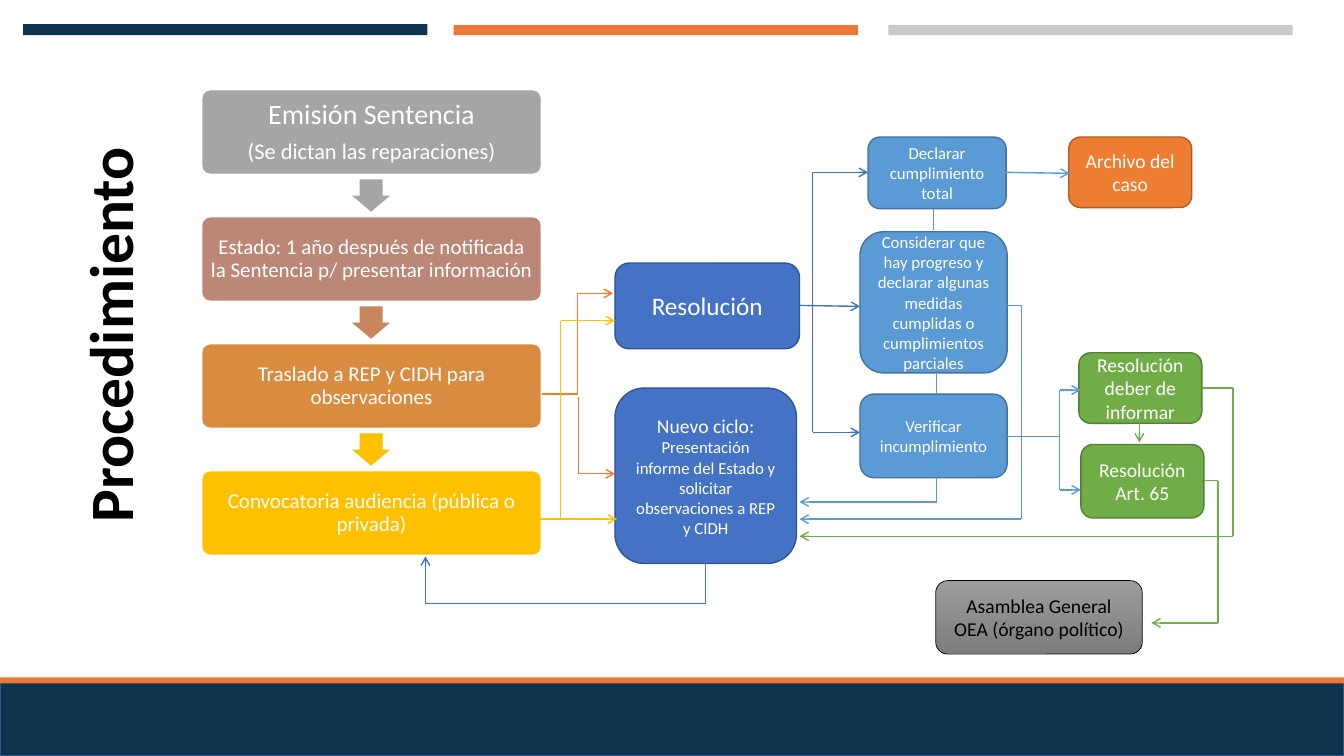
"""Build the slide on the procedure that follows a judgment."""
import dataclasses

import lxml.etree
import pptx
import pptx.dml.color
import pptx.enum.shapes
import pptx.enum.text
import pptx.oxml.ns
import pptx.util

Inches = pptx.util.Inches
Pt = pptx.util.Pt
ShapeType = pptx.enum.shapes.MSO_SHAPE
Align = pptx.enum.text.PP_ALIGN
Anchor = pptx.enum.text.MSO_ANCHOR


@dataclasses.dataclass(frozen=True)
class Theme:
    font: str = "Calibri"
    white: str = "FFFFFF"
    black: str = "000000"
    navy: str = "0D334D"
    accent: str = "ED7736"
    silver: str = "C9C9C9"
    gray: str = "A5A5A5"
    rose: str = "BB8776"
    copper: str = "C9855C"
    ochre: str = "D98B3F"
    gold: str = "FFC000"
    blue: str = "4472C4"
    blue_edge: str = "325491"
    sky: str = "5B9BD5"
    sky_edge: str = "43739E"
    orange: str = "ED7D31"
    orange_edge: str = "AF5C24"
    green: str = "70AD47"
    green_edge: str = "538035"
    gradient: tuple = ("9D9D9D", "7C7C7C")
    title: int = 44
    heading: int = 20
    resolution: int = 18
    subheading: int = 16
    step: int = 15
    body: int = 14
    small: int = 12


THEME = Theme()


def rgb(color):
    return pptx.dml.color.RGBColor.from_string(color)


def add_run(paragraph, text, size, color, bold=False):
    run = paragraph.add_run()
    run.text = text
    run.font.name = THEME.font
    run.font.size = Pt(size)
    run.font.bold = bold
    run.font.color.rgb = rgb(color)


def add_block(slide, kind, box, fill, edge=None, edge_width=1):
    shape = slide.shapes.add_shape(kind, *map(Inches, box))
    shape.shadow.inherit = False
    if isinstance(fill, tuple):
        shape.fill.gradient()
        shape.fill.gradient_angle = 270
        for stop, color in zip(shape.fill.gradient_stops, fill):
            stop.color.rgb = rgb(color)
    else:
        shape.fill.solid()
        shape.fill.fore_color.rgb = rgb(fill)
    if edge:
        shape.line.color.rgb = rgb(edge)
        shape.line.width = Pt(edge_width)
    else:
        shape.line.fill.background()
    return shape


def write_lines(shape, lines, color):
    frame = shape.text_frame
    frame.word_wrap = True
    frame.vertical_anchor = Anchor.MIDDLE
    for index, (text, size) in enumerate(lines):
        paragraph = frame.add_paragraph() if index else frame.paragraphs[0]
        paragraph.alignment = Align.CENTER
        add_run(paragraph, text, size, color)


def add_node(slide, box, fill, edge, *lines, color=THEME.white, edge_width=1):
    shape = add_block(slide, ShapeType.ROUNDED_RECTANGLE, box, fill, edge, edge_width)
    write_lines(shape, lines, color)


def add_step(slide, top, fill, inset, lines):
    shape = add_block(slide, ShapeType.ROUNDED_RECTANGLE, (2, top, 3.37, 0.84), fill, THEME.white)
    shape.adjustments[0] = 0.1
    write_lines(shape, lines, THEME.white)
    frame = shape.text_frame
    frame.margin_left = frame.margin_right = Inches(inset)
    frame.margin_top = frame.margin_bottom = Inches(inset)
    for paragraph, (_, size) in zip(frame.paragraphs, lines):
        paragraph.line_spacing = 0.9
        paragraph.space_after = Pt(size * 0.35)


def add_step_arrow(slide, top, fill):
    arrow = add_block(slide, ShapeType.RIGHT_ARROW, (3.52, top, 0.32, 0.38), fill)
    arrow.rotation = 90
    arrow.adjustments[0] = 0.6


def add_route(slide, color, points, arrow=True):
    for index, (start, end) in enumerate(zip(points, points[1:]), 2):
        connector = slide.shapes.add_connector(
            pptx.enum.shapes.MSO_CONNECTOR.STRAIGHT, *map(Inches, start + end))
        connector.line.color.rgb = rgb(color)
        connector.line.width = Pt(1)
        if arrow and index == len(points):
            head = lxml.etree.SubElement(connector.line._get_or_add_ln(), pptx.oxml.ns.qn("a:tailEnd"))
            head.set("type", "arrow")
        lxml.etree.SubElement(connector._element.spPr, pptx.oxml.ns.qn("a:effectLst"))


def add_title(slide, text):
    title = slide.shapes.title
    title.left, title.top, title.width, title.height = map(Inches, (-1, 2.68, 4.26, 0.94))
    title.rotation = 270
    frame = title.text_frame
    frame.word_wrap = True
    frame.auto_size = pptx.enum.text.MSO_AUTO_SIZE.NONE
    frame.vertical_anchor = Anchor.TOP
    frame.paragraphs[0].alignment = Align.LEFT
    add_run(frame.paragraphs[0], text, THEME.title, THEME.black, bold=True)


def add_bands(slide):
    for box, fill, edge in (
        ((0.23, 0.24, 4.01, 0.11), THEME.navy, None),
        ((4.5, 0.25, 4.01, 0.1), THEME.accent, None),
        ((8.81, 0.25, 4.01, 0.1), THEME.silver, None),
        ((0, 6.77, 13.33, 0.73), THEME.navy, THEME.blue_edge),
        ((0, 6.72, 13.33, 0.06), THEME.accent, None),
    ):
        add_block(slide, ShapeType.RECTANGLE, box, fill, edge)


def add_steps(slide):
    steps = (
        (THEME.gray, 0.08, [("Emisión Sentencia", THEME.heading),
                            ("(Se dictan las reparaciones)", THEME.subheading)]),
        (THEME.rose, 0.06, [("Estado: 1 año después de notificada la Sentencia p/ presentar información", THEME.step)]),
        (THEME.ochre, 0.06, [("Traslado a REP y CIDH para observaciones", THEME.step)]),
        (THEME.gold, 0.06, [("Convocatoria audiencia (pública o privada)", THEME.step)]),
    )
    pitch = 1.26
    for index, step in enumerate(steps):
        add_step(slide, 0.89 + index * pitch, *step)
    for index, fill in enumerate((THEME.gray, THEME.copper, THEME.gold)):
        add_step_arrow(slide, 1.75 + index * pitch, fill)


def add_nodes(slide):
    blue = THEME.blue, THEME.blue_edge
    sky = THEME.sky, THEME.sky_edge
    green = THEME.green, THEME.green_edge
    add_node(slide, (6.1, 2.61, 1.83, 0.85), *blue, ("Resolución", THEME.resolution))
    add_node(slide, (6.1, 3.85, 1.8, 1.74), *blue, ("Nuevo ciclo:", THEME.body),
             ("Presentación informe del Estado y solicitar observaciones a REP y CIDH", THEME.small))
    add_node(slide, (8.61, 1.36, 1.37, 0.71), *sky, ("Declarar cumplimiento total", THEME.small))
    add_node(slide, (8.53, 2.3, 1.46, 1.4), *sky,
             ("Considerar que hay progreso y declarar algunas medidas cumplidas o cumplimientos parciales", THEME.small))
    add_node(slide, (8.53, 3.91, 1.46, 0.83), *sky, ("Verificar incumplimiento", THEME.small))
    add_node(slide, (10.6, 1.36, 1.22, 0.7), THEME.orange, THEME.orange_edge, ("Archivo del caso", THEME.body))
    add_node(slide, (10.7, 3.5, 1.22, 0.7), *green, ("Resolución deber de informar", THEME.body))
    add_node(slide, (10.72, 4.41, 1.22, 0.73), *green, ("Resolución Art. 65", THEME.body))
    add_node(slide, (9.28, 5.76, 2.05, 0.73), THEME.gradient, THEME.black,
             ("Asamblea General OEA (órgano político)", THEME.body), color=THEME.black, edge_width=0.5)


def add_routes(slide):
    for color, points in (
        (THEME.orange, [(5.38, 3.91), (5.73, 3.91), (5.73, 2.91), (6.08, 2.91)]),
        (THEME.orange, [(5.74, 3.94), (5.74, 4.7), (6.1, 4.7)]),
        (THEME.gold, [(5.56, 5.14), (5.56, 3.18), (6.1, 3.18)]),
        (THEME.gold, [(5.35, 5.15), (6.12, 5.15)]),
        (THEME.blue, [(7.93, 3.03), (8.53, 3.04)]),
        (THEME.blue, [(8.06, 1.71), (8.61, 1.71)]),
        (THEME.blue, [(8.06, 1.71), (8.06, 4.29), (8.53, 4.29)]),
        (THEME.blue, [(7, 5.59), (7, 5.99), (4.22, 5.99), (4.22, 5.52)]),
        (THEME.sky, [(9.97, 1.71), (10.61, 1.72)]),
        (THEME.sky, [(9.29, 4.74), (9.29, 4.98), (7.93, 4.98)]),
        (THEME.sky, [(9.98, 3.03), (10.13, 3.03), (10.13, 5.15), (7.93, 5.15)]),
        (THEME.sky, [(9.99, 4.33), (10.51, 4.33), (10.51, 3.87), (10.72, 3.87)]),
        (THEME.sky, [(10.51, 4.33), (10.51, 4.86), (10.72, 4.86)]),
        (THEME.green, [(11.92, 3.85), (12.23, 3.85), (12.23, 5.32), (7.93, 5.32)]),
        (THEME.green, [(11.94, 4.77), (12.08, 4.77), (12.08, 6.18), (11.42, 6.18)]),
        (THEME.green, [(11.3, 4.2), (11.3, 4.39)]),
    ):
        add_route(slide, color, points)
    add_route(slide, THEME.sky, [(9.26, 2.07), (9.26, 2.28)], arrow=False)
    add_route(slide, THEME.sky, [(9.29, 3.7), (9.29, 3.91)], arrow=False)


def main():
    presentation = pptx.Presentation()
    presentation.slide_width, presentation.slide_height = Inches(13.33), Inches(7.5)
    slide = presentation.slides.add_slide(presentation.slide_layouts[5])
    for add_part in (add_steps, add_nodes, add_routes, add_bands):
        add_part(slide)
    add_title(slide, "Procedimiento")
    presentation.save("out.pptx")


if __name__ == "__main__":
    main()
